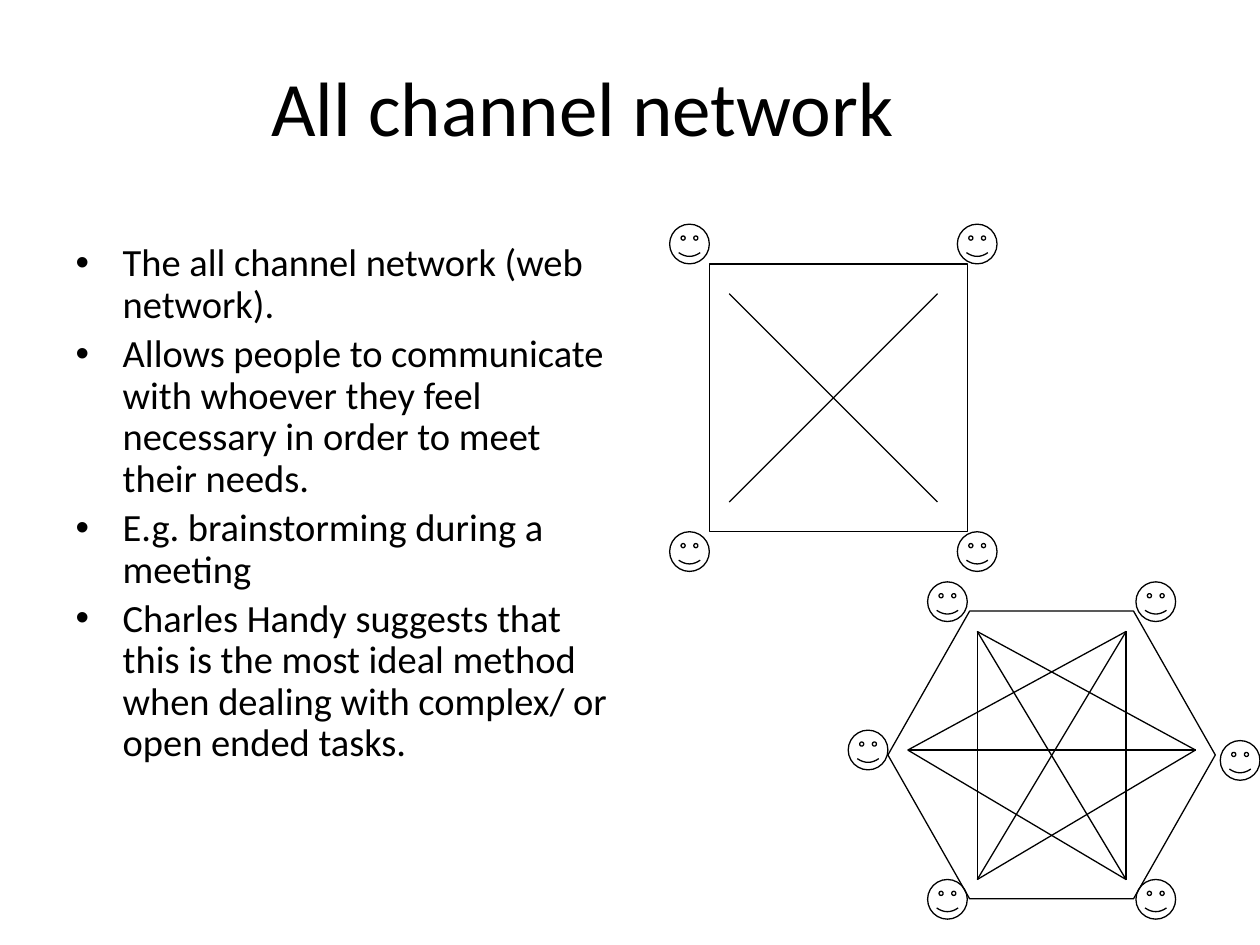
from itertools import combinations, product

from pptx import Presentation
from pptx.dml.color import RGBColor
from pptx.enum.shapes import MSO_CONNECTOR, MSO_SHAPE
from pptx.enum.text import MSO_ANCHOR, MSO_AUTO_SIZE, PP_ALIGN
from pptx.oxml.ns import qn
from pptx.util import Cm, Pt

BLACK = RGBColor(0, 0, 0)
FONT = "Calibri"

prs = Presentation()
prs.slide_width, prs.slide_height = Cm(25.4), Cm(19.05)
s = prs.slides.add_slide(prs.slide_layouts[1])


def add_outline(kind, x, y, w, h):
    sp = s.shapes.add_shape(kind, Cm(x), Cm(y), Cm(w), Cm(h))
    sp.shadow.inherit = False
    sp.fill.background()
    sp.line.color.rgb = BLACK
    sp.line.width = Pt(0.75)
    return sp


def add_line(start, end):
    ln = s.shapes.add_connector(MSO_CONNECTOR.STRAIGHT, *map(Cm, start + end))
    ln.line.color.rgb = BLACK
    ln.line.width = Pt(0.75)
    ln._element.spPr.append(ln._element.makeelement(qn("a:effectLst"), {}))


title = s.shapes.title
title.left, title.top, title.width, title.height = Cm(1.27), Cm(0.33), Cm(20.96), Cm(3.6)
tf = title.text_frame
tf.text = "All channel network"
tf.auto_size = MSO_AUTO_SIZE.NONE
tf.vertical_anchor = MSO_ANCHOR.MIDDLE
p = tf.paragraphs[0]
p.alignment = PP_ALIGN.CENTER
p.font.size, p.font.name, p.font.color.rgb = Pt(44), FONT, BLACK

body = s.placeholders[1]
body.left, body.top, body.width, body.height = Cm(1.27), Cm(4.78), Cm(11.23), Cm(12.24)
tf = body.text_frame
tf.text = "\n".join([
    "The all channel network (web network).",
    "Allows people to communicate with whoever they feel necessary in order to meet their needs.",
    "E.g. brainstorming during a meeting",
    "Charles Handy suggests that this is the most ideal method when dealing with complex/ or open ended tasks.",
])
tf.auto_size = MSO_AUTO_SIZE.NONE
for p in tf.paragraphs:
    p.line_spacing = 0.9
    p.space_before = Pt(4.4)
    p.font.size, p.font.name, p.font.color.rgb = Pt(22), FONT, BLACK
    pPr = p._p.get_or_add_pPr()
    pPr.set("marL", str(Cm(0.95)))
    pPr.set("indent", str(-Cm(0.95)))

add_outline(MSO_SHAPE.RECTANGLE, 14.3, 5.32, 5.2, 5.4)
hexagon = add_outline(MSO_SHAPE.HEXAGON, 17.9, 12.32, 6.6, 5.8)
hexagon.adjustments[0] = 0.284

square_faces = list(product((13.5, 19.3), (4.52, 10.72)))
hexagon_faces = list(product((18.7, 22.9), (11.73, 17.73))) + [(17.1, 14.72), (24.6, 14.93)]
for x, y in square_faces + hexagon_faces:
    add_outline(MSO_SHAPE.SMILEY_FACE, x, y, 0.8, 0.8)

square = [(14.7, 5.92), (18.9, 5.92), (18.9, 10.12), (14.7, 10.12)]
ring = [(19.7, 12.73), (22.7, 12.73), (24.1, 15.12), (22.7, 17.73), (19.7, 17.73), (18.3, 15.12)]
for nodes in (square, ring):
    for i, j in combinations(range(len(nodes)), 2):
        if j - i not in (1, len(nodes) - 1):
            add_line(nodes[i], nodes[j])

prs.save("out.pptx")
